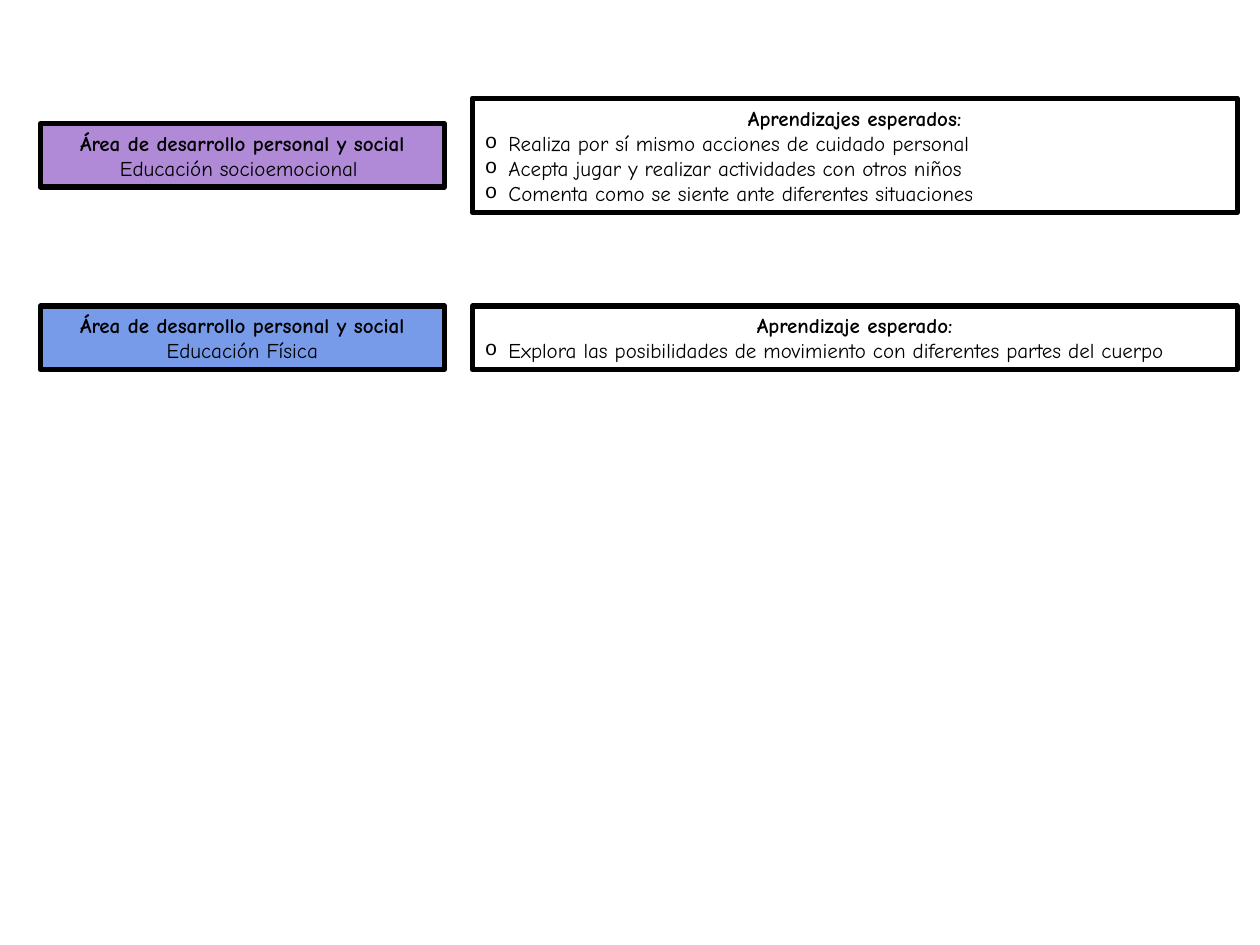
"""Build a slide pairing each development area with its expected learning."""
from lxml.etree import SubElement
from pptx import Presentation
from pptx.dml.color import RGBColor
from pptx.enum.shapes import MSO_SHAPE
from pptx.enum.text import MSO_ANCHOR, MSO_AUTO_SIZE, PP_ALIGN
from pptx.oxml.ns import qn
from pptx.util import Pt

ROWS = [
    {"middle": 88.8, "fill": "B089D7",
     "area": ("Área de desarrollo personal y social", "Educación socioemocional "),
     "learning": ("Aprendizajes esperados:",
                  "Realiza por sí mismo acciones de cuidado personal",
                  "Acepta jugar y realizar actividades con otros niños",
                  "Comenta como se siente ante diferentes situaciones")},
    {"middle": 193, "fill": "779AE9",
     "area": ("Área de desarrollo personal y social", "Educación Física"),
     "learning": ("Aprendizaje esperado:",
                  "Explora las posibilidades de movimiento con diferentes partes del cuerpo")},
]
AREA_COLUMN = (23, 231)
LEARNING_COLUMN = (270, 437)
LINE_HEIGHT, PADDING = 14.6, 7
INDENT = 13.5
FONT = {"name": "Comic Neue", "size": Pt(12)}
FRAME = {"word_wrap": True, "auto_size": MSO_AUTO_SIZE.SHAPE_TO_FIT_TEXT,
         "vertical_anchor": MSO_ANCHOR.MIDDLE,
         "margin_left": Pt(7.2), "margin_right": Pt(7.2),
         "margin_top": Pt(3.6), "margin_bottom": Pt(3.6)}


def color(value):
    return RGBColor.from_string(value)


def apply(target, values):
    for name, value in values.items():
        setattr(target, name, value)


def add_bullet(p):
    pPr = p._p.get_or_add_pPr()
    pPr.set("marL", str(Pt(INDENT)))
    pPr.set("indent", str(-Pt(INDENT)))
    SubElement(pPr, qn("a:buFont"), typeface="Courier New")
    SubElement(pPr, qn("a:buChar"), char="o")


def add_box(s, column, middle, lines, fill=None, bulleted=False):
    left, width = column
    height = PADDING + LINE_HEIGHT * len(lines)
    sp = s.shapes.add_shape(MSO_SHAPE.RECTANGLE, Pt(left), Pt(middle - height / 2),
                            Pt(width), Pt(height))
    sp.shadow.inherit = False
    if fill:
        sp.fill.solid()
        sp.fill.fore_color.rgb = color(fill)
    else:
        sp.fill.background()
    sp.line.color.rgb = color("000000")
    sp.line.width = Pt(3)
    tf = sp.text_frame
    apply(tf, FRAME)
    for i, text in enumerate(lines):
        p = tf.paragraphs[0] if i == 0 else tf.add_paragraph()
        is_item = bulleted and i > 0
        p.alignment = PP_ALIGN.LEFT if is_item else PP_ALIGN.CENTER
        if is_item:
            add_bullet(p)
        r = p.add_run()
        r.text = text
        apply(r.font, {**FONT, "bold": i == 0})
        r.font.color.rgb = color("000000")


def main():
    prs = Presentation()
    prs.slide_width, prs.slide_height = Pt(720), Pt(540)
    s = prs.slides.add_slide(prs.slide_layouts[6])
    for row in ROWS:
        add_box(s, AREA_COLUMN, row["middle"], row["area"], fill=row["fill"])
    for row in ROWS:
        add_box(s, LEARNING_COLUMN, row["middle"], row["learning"], bulleted=True)
    prs.save("out.pptx")


if __name__ == "__main__":
    main()
